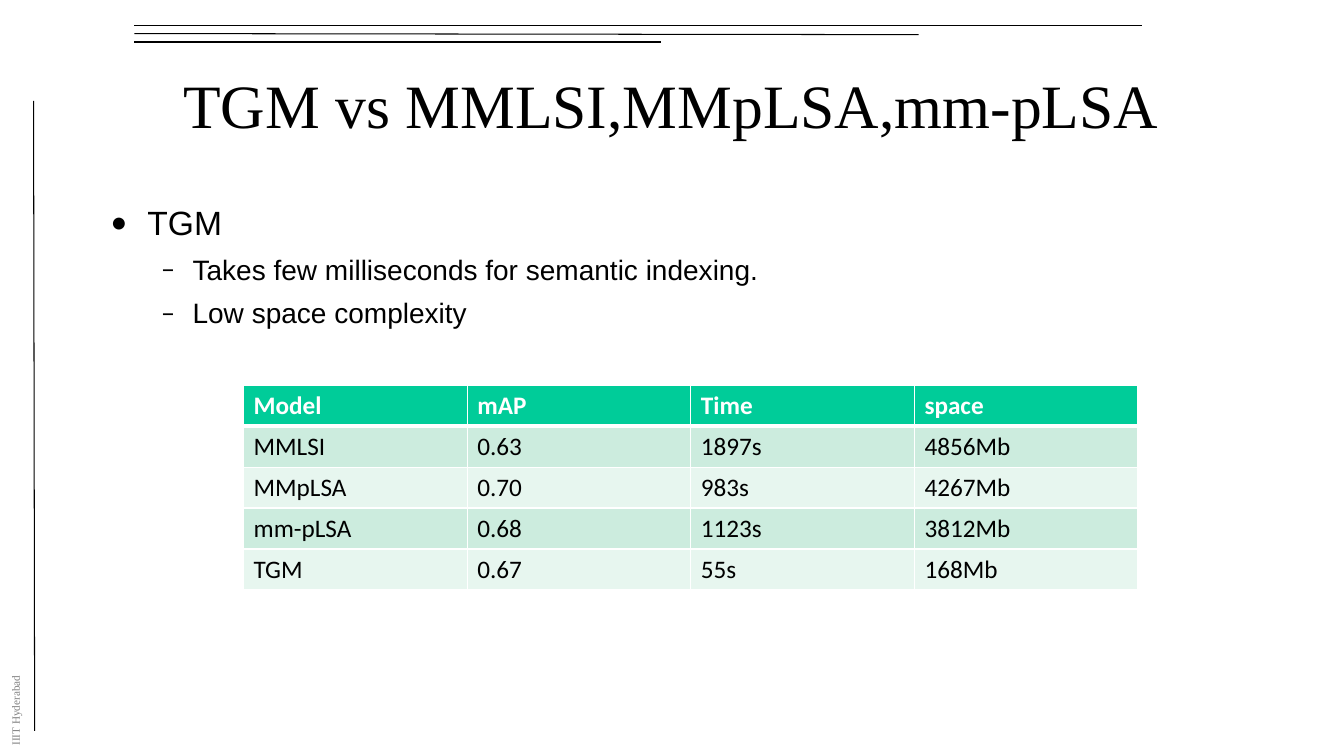
from lxml.etree import SubElement
from pptx import Presentation
from pptx.dml.color import RGBColor
from pptx.enum.shapes import MSO_CONNECTOR as CONN
from pptx.enum.text import MSO_ANCHOR as ANCHOR, PP_ALIGN as ALIGN
from pptx.oxml.ns import qn
from pptx.util import Pt

PX = 9525
RULES = [
    (128, 24, 1088, 24),
    (128, 32, 875, 33),
    (128, 40, 630, 40),
    (32, 96, 33, 696),
]
RESULTS = [
    ["Model", "mAP", "Time", "space"],
    ["MMLSI", "0.63", "1897s", "4856Mb"],
    ["MMpLSA", "0.70", "983s", "4267Mb"],
    ["mm-pLSA", "0.68", "1123s", "3812Mb"],
    ["TGM", "0.67", "55s", "168Mb"],
]
LEVELS = [
    {"level": 0, "bullet": "•", "left": 35, "hang": 35, "size": 24},
    {"level": 1, "bullet": "–", "left": 78, "hang": 30, "size": 20},
]
POINTS = [
    (0, "TGM"),
    (1, "Takes few milliseconds for semantic indexing."),
    (1, "Low space complexity"),
]


def px(n):
    """Turn whole px into EMU."""
    return n * PX


def rgb(value):
    """Turn a hex string into a colour."""
    return RGBColor.from_string(value)


def add_run(p, text, size, name, color="000000", bold=False):
    """Add a formatted run to a paragraph."""
    r = p.add_run()
    r.text = text
    for key, value in {"size": Pt(size), "name": name, "bold": bold}.items():
        setattr(r.font, key, value)
    r.font.color.rgb = rgb(color)


def add_rule(s, x1, y1, x2, y2):
    """Draw a thin black line."""
    sp = s.shapes.add_connector(CONN.STRAIGHT, px(x1), px(y1), px(x2), px(y2))
    sp.line.width = Pt(0.75)
    sp.line.color.rgb = rgb("000000")
    SubElement(sp._element.spPr, qn("a:effectLst"))


def add_box(s, x, y, w, h, wrap=True, anchor=ANCHOR.TOP):
    """Add an empty text box."""
    sp = s.shapes.add_textbox(px(x), px(y), px(w), px(h))
    sp.text_frame.word_wrap = wrap
    sp.text_frame.vertical_anchor = anchor
    return sp


def add_label(s, text):
    """Add the small sideways label at the left edge."""
    sp = add_box(s, -29, 664, 88, 23, wrap=False)
    sp.rotation = 270
    add_run(sp.text_frame.paragraphs[0], text, 8, "Times New Roman", "808080")


def add_title(s, text):
    """Add the centred title."""
    sp = add_box(s, 96, 69, 1087, 80, anchor=ANCHOR.MIDDLE)
    p = sp.text_frame.paragraphs[0]
    p.alignment = ALIGN.CENTER
    p.line_spacing = 0.63
    add_run(p, text, 44, "Times New Roman")


def set_bullet(p, char, left, hang):
    """Give a paragraph a black bullet and a hanging indent."""
    pPr = p._p.get_or_add_pPr()
    pPr.set("marL", str(px(left)))
    pPr.set("indent", str(-px(hang)))
    color = SubElement(pPr, qn("a:buClr"))
    SubElement(color, qn("a:srgbClr"), val="000000")
    SubElement(pPr, qn("a:buFont"), typeface="Calibri")
    SubElement(pPr, qn("a:buChar"), char=char)


def add_bullets(s, points):
    """Add the bulleted body text."""
    tf = add_box(s, 96, 188, 1069, 233).text_frame
    for i, (level, text) in enumerate(points):
        fmt = LEVELS[level]
        p = tf.add_paragraph() if i else tf.paragraphs[0]
        p.level = fmt["level"]
        set_bullet(p, fmt["bullet"], fmt["left"], fmt["hang"])
        if i:
            p.space_before = Pt(7)
        add_run(p, text, fmt["size"], "Arial")


def set_borders(cell, widths):
    """Draw white cell borders, widths in points by side."""
    tcPr = cell._tc.get_or_add_tcPr()
    for i, (side, width) in enumerate(widths.items()):
        ln = tcPr.makeelement(qn(f"a:ln{side}"), {"w": str(Pt(width))})
        fill = SubElement(ln, qn("a:solidFill"))
        SubElement(fill, qn("a:srgbClr"), val="FFFFFF")
        tcPr.insert(i, ln)


def add_results(s, rows):
    """Add the table with a green header and banded rows."""
    shape = s.shapes.add_table(len(rows), len(rows[0]), px(232), px(367),
                               px(213 * len(rows[0])), px(39 * len(rows)))
    table = shape.table
    for i, row in enumerate(rows):
        head = i == 0
        band = "CCECDE" if i % 2 else "E7F6EF"
        for j, text in enumerate(row):
            cell = table.cell(i, j)
            cell.fill.solid()
            cell.fill.fore_color.rgb = rgb("00CC99" if head else band)
            set_borders(cell, {"L": 1, "R": 1, "T": 3 if i == 1 else 1,
                               "B": 3 if head else 1})
            add_run(cell.text_frame.paragraphs[0], text, 18, "Calibri",
                    "FFFFFF" if head else "000000", head)


def main():
    """Build and save the slide."""
    prs = Presentation()
    prs.slide_width, prs.slide_height = px(1280), px(720)
    s = prs.slides.add_slide(prs.slide_layouts[6])
    for rule in RULES:
        add_rule(s, *rule)
    add_label(s, "IIIT Hyderabad")
    add_title(s, "TGM vs MMLSI,MMpLSA,mm-pLSA")
    add_results(s, RESULTS)
    add_bullets(s, POINTS)
    prs.save("out.pptx")


if __name__ == "__main__":
    main()
